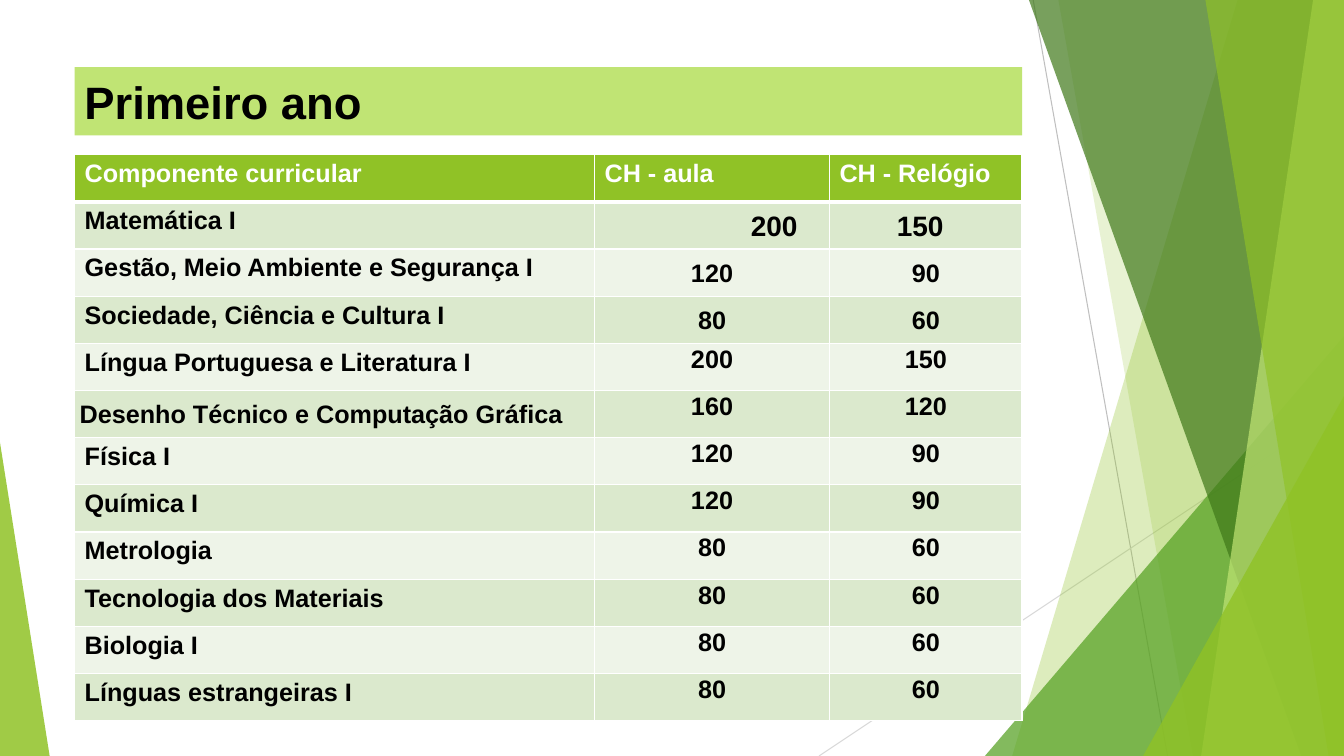
from dataclasses import dataclass
from lxml.etree import SubElement
from pptx import Presentation
from pptx.dml.color import RGBColor
from pptx.enum.shapes import MSO_CONNECTOR as Connector, MSO_SHAPE as Shape
from pptx.enum.text import MSO_ANCHOR as Anchor, PP_ALIGN as Align
from pptx.oxml.ns import qn
from pptx.util import Pt


@dataclass(frozen=True)
class Theme:
    font: str = "Arial"
    green: str = "90C226"
    leaf: str = "54A021"
    forest: str = "3F7819"
    lime: str = "C0E474"
    bands: tuple = ("DBE9CD", "EEF4E8")
    white: str = "FFFFFF"
    black: str = "000000"
    title_size: float = 32.4
    body_size: int = 18
    lead_size: int = 20


theme = Theme()
WIDTH, HEIGHT = 960, 540

heading = "Primeiro ano"
headers = ("Componente curricular", "CH - aula", "CH - Relógio")
courses = [
    ("Matemática I", 200, 150),
    ("Gestão, Meio Ambiente e Segurança I", 120, 90),
    ("Sociedade, Ciência e Cultura I", 80, 60),
    ("Língua Portuguesa e Literatura I", 200, 150),
    ("Desenho Técnico e Computação Gráfica", 160, 120),
    ("Física I", 120, 90),
    ("Química I", 120, 90),
    ("Metrologia", 80, 60),
    ("Tecnologia dos Materiais", 80, 60),
    ("Biologia I", 80, 60),
    ("Línguas estrangeiras I", 80, 60),
]
drawing_row = 5
middle_rows = (1, 2, 3)
lead_indents = {1: 108, 2: 44.5}

rays = [((738, 0), (834, 540), "BFBFBF"), ((960, 290), (585, 540), "D9D9D9")]
back_blades = [(884, 723, theme.green, 30), (756, 852, theme.green, 20)]
front_blades = [
    (735, 929.5, theme.forest, 70),
    (938, 858, theme.lime, 70),
    (861, 949, theme.green, 65),
]
back_corners = [(703.5, 240, 256.5, 1, theme.leaf, 72)]
front_corners = [
    (816.5, 283, 143.5, 1, theme.green, 80),
    (0, 316, 35.5, 0, theme.green, 85),
]

LEFT, TABLE_WIDTH = 53.3, 676.8
TITLE_TOP, TITLE_HEIGHT = 48, 48.8
TABLE_TOP, ROW_HEIGHT = 110.4, 33.72
column_widths = (371.4, 167.8, 137.6)


def paint(shape, color, opacity=100):
    shape.shadow.inherit = False
    shape.fill.solid()
    shape.fill.fore_color.rgb = RGBColor.from_string(color)
    shape.line.fill.background()
    if opacity < 100:
        tint = shape._element.spPr.find(".//" + qn("a:srgbClr"))
        SubElement(tint, qn("a:alpha"), val=str(opacity * 1000))


def add_ray(slide, start, end, color):
    ray = slide.shapes.add_connector(Connector.STRAIGHT, *map(Pt, start + end))
    ray.line.color.rgb = RGBColor.from_string(color)
    ray.line.width = Pt(0.75)
    SubElement(ray._element.spPr, qn("a:effectLst"))


def add_blade(slide, top_x, bottom_x, color, opacity):
    outline = slide.shapes.build_freeform(Pt(top_x), 0)
    corners = [(WIDTH, 0), (WIDTH, HEIGHT), (bottom_x, HEIGHT)]
    outline.add_line_segments([(Pt(x), Pt(y)) for x, y in corners], close=True)
    paint(outline.convert_to_shape(), color, opacity)


def add_corner(slide, left, top, width, apex, color, opacity):
    corner = slide.shapes.add_shape(
        Shape.ISOSCELES_TRIANGLE, Pt(left), Pt(top), Pt(width), Pt(HEIGHT - top))
    corner.adjustments[0] = apex
    paint(corner, color, opacity)


def write(paragraph, wording, size, color):
    run = paragraph.add_run()
    run.text = wording
    run.font.name = theme.font
    run.font.size = Pt(size)
    run.font.bold = True
    run.font.color.rgb = RGBColor.from_string(color)


def add_border(cell, side, width):
    edge = SubElement(cell._tc.get_or_add_tcPr(), qn("a:" + side), w=str(Pt(width)))
    SubElement(SubElement(edge, qn("a:solidFill")), qn("a:srgbClr"), val=theme.white)


def fill_cell(cell, row, column, wording):
    is_header = row == 0
    for side in ("lnL", "lnR", "lnT", "lnB"):
        under_header = (row, side) in ((0, "lnB"), (1, "lnT"))
        add_border(cell, side, 3 if under_header else 1)
    cell.fill.solid()
    cell.fill.fore_color.rgb = RGBColor.from_string(
        theme.green if is_header else theme.bands[(row - 1) % 2])

    paragraph = cell.text_frame.paragraphs[0]
    is_drawing = row == drawing_row and column == 0
    is_hours = column > 0 and not is_header
    is_lead = is_hours and row == 1
    if is_hours or is_drawing:
        cell.margin_left = cell.margin_right = Pt(3.6)
        cell.margin_top = cell.margin_bottom = 0
        paragraph.line_spacing = 1.07
        paragraph.space_after = Pt(8)
        paragraph.alignment = Align.JUSTIFY if is_drawing or is_lead else Align.CENTER
        if is_drawing or row in middle_rows:
            cell.vertical_anchor = Anchor.MIDDLE
    if is_lead:
        indents = paragraph._p.get_or_add_pPr()
        indents.set("marL", str(Pt(lead_indents[column])))
        indents.set("indent", "0")
    write(paragraph, str(wording), theme.lead_size if is_lead else theme.body_size,
          theme.white if is_header else theme.black)


def add_curriculum(slide):
    rows = [headers, *courses]
    curriculum = slide.shapes.add_table(
        len(rows), len(headers), Pt(LEFT), Pt(TABLE_TOP),
        Pt(TABLE_WIDTH), Pt(ROW_HEIGHT * len(rows))).table
    for column, width in zip(curriculum.columns, column_widths):
        column.width = Pt(width)
    for r, entries in enumerate(rows):
        curriculum.rows[r].height = Pt(ROW_HEIGHT)
        for c, wording in enumerate(entries):
            fill_cell(curriculum.cell(r, c), r, c, wording)


def add_heading(slide):
    banner = slide.shapes.add_shape(
        Shape.RECTANGLE, Pt(LEFT), Pt(TITLE_TOP), Pt(TABLE_WIDTH), Pt(TITLE_HEIGHT))
    paint(banner, theme.lime)
    banner.text_frame.word_wrap = True
    banner.text_frame.vertical_anchor = Anchor.MIDDLE
    paragraph = banner.text_frame.paragraphs[0]
    paragraph.alignment = Align.LEFT
    write(paragraph, heading, theme.title_size, theme.black)


def main():
    deck = Presentation()
    deck.slide_width, deck.slide_height = Pt(WIDTH), Pt(HEIGHT)
    slide = deck.slides.add_slide(deck.slide_layouts[6])
    layers = [
        (add_ray, rays),
        (add_blade, back_blades),
        (add_corner, back_corners),
        (add_blade, front_blades),
        (add_corner, front_corners),
    ]
    for add_part, parts in layers:
        for part in parts:
            add_part(slide, *part)
    add_curriculum(slide)
    add_heading(slide)
    deck.save("out.pptx")


if __name__ == "__main__":
    main()
